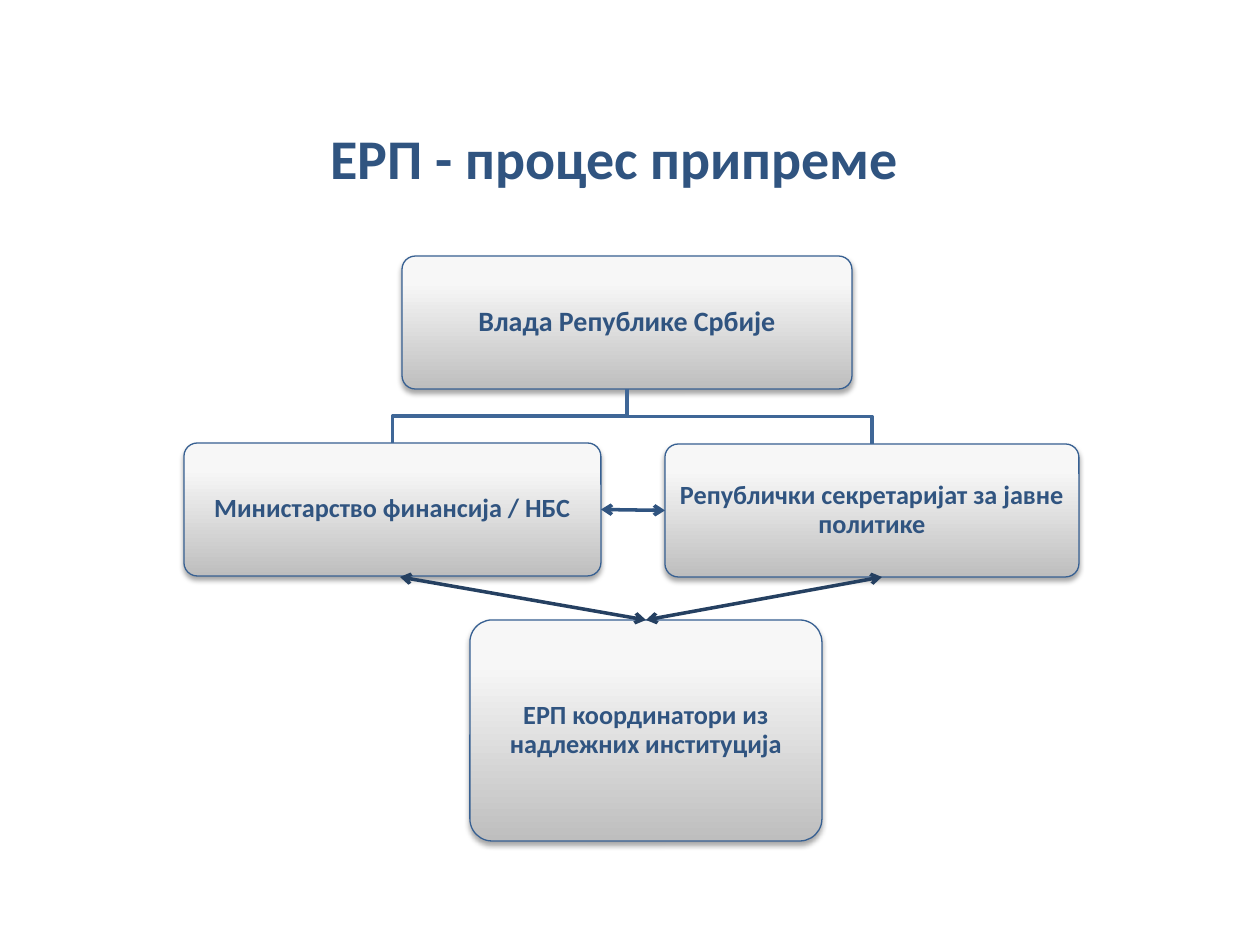
from lxml import etree
from pptx import Presentation
from pptx.dml.color import RGBColor
from pptx.enum.shapes import MSO_CONNECTOR, MSO_SHAPE
from pptx.enum.text import MSO_ANCHOR, MSO_AUTO_SIZE, PP_ALIGN
from pptx.oxml.ns import qn
from pptx.util import Emu, Pt

ROUNDED = MSO_SHAPE.ROUNDED_RECTANGLE
STRAIGHT = MSO_CONNECTOR.STRAIGHT
CENTER = PP_ALIGN.CENTER
MIDDLE = MSO_ANCHOR.MIDDLE
TOP_SIDE, LEFT_SIDE, RIGHT_SIDE = 0, 1, 3

PX = 914400 // 126
FONT = "Calibri"
COLORS = {
    "text": "305480", "border": "376092", "branch": "3F6797",
    "arrow": "254061", "shadow": "000000",
}
# Position in thousandths of a percent, from the bottom of a box upwards
GRADIENT = [(0, "BEBEBE"), (80000, "F7F7F7"), (100000, "F8F8F8")]

TITLE = ("ЕРП - процес припреме", (63, 117, 1103, 81), 32)
# key: text, (left, top, width, height), font size, inset
BOXES = {
    "government": ("Влада Републике Србије", (402, 256, 450, 133), 16, 9),
    "ministry": ("Министарство финансија / НБС", (184, 443, 417, 133), 15, 7),
    "secretariat": ("Републички секретаријат за јавне политике",
                    (665, 444, 414, 133), 15, 7),
    "coordinators": ("ЕРП координатори из надлежних институција",
                     (470, 620, 352, 221), 15, 9),
}
BRANCHES = [("government", "ministry"), ("government", "secretariat")]
# Outer ends of the arrows that meet at the top of the coordinators box
COORDINATION_ENDS = [(400, 577), (882, 577)]


def px(*values):
    return [Emu(round(value * PX)) for value in values]


def rgb(name):
    return RGBColor.from_string(COLORS[name])


def write(frame, text, size):
    frame.word_wrap = True
    paragraph = frame.paragraphs[0]
    paragraph.text = text
    paragraph.alignment = CENTER
    font = paragraph.font
    font.name, font.size, font.bold = FONT, Pt(size), True
    font.color.rgb = rgb("text")
    return paragraph


def set_line(shape, color, width):
    shape.line.color.rgb = rgb(color)
    shape.line.width = Pt(width)


def add_color(parent, color):
    return etree.SubElement(parent, qn("a:srgbClr"), val=color)


def shade(box):
    box.fill.gradient()
    box.fill.gradient_angle = 90
    stops = box.fill._xPr.find(qn("a:gradFill")).find(qn("a:gsLst"))
    for stop in list(stops):
        stops.remove(stop)
    for position, color in GRADIENT:
        add_color(etree.SubElement(stops, qn("a:gs"), pos=str(position)), color)


def drop_shadow(box):
    box.shadow.inherit = False
    effects = box._element.spPr.find(qn("a:effectLst"))
    shadow = etree.SubElement(
        effects, qn("a:outerShdw"), blurRad=str(Pt(3.1)), dist=str(Pt(1.8)),
        dir="5400000", rotWithShape="0")
    etree.SubElement(add_color(shadow, COLORS["shadow"]), qn("a:alpha"), val="35000")


def add_box(shapes, text, place, size, inset):
    box = shapes.add_shape(ROUNDED, *px(*place))
    box.adjustments[0] = 0.1
    shade(box)
    set_line(box, "border", 0.75)
    drop_shadow(box)
    frame = box.text_frame
    write(frame, text, size).line_spacing = 0.9
    frame.vertical_anchor = MIDDLE
    frame.margin_left, frame.margin_top, frame.margin_right, frame.margin_bottom = px(*[inset] * 4)
    return box


def add_branch(shapes, parent, child):
    start_x, start_y = parent.left + parent.width // 2, parent.top + parent.height
    end_x, end_y = child.left + child.width // 2, child.top
    bend_y = (start_y + end_y) // 2
    builder = shapes.build_freeform(start_x, start_y)
    builder.add_line_segments(
        [(start_x, bend_y), (end_x, bend_y), (end_x, end_y)], close=False)
    branch = builder.convert_to_shape()
    branch.fill.background()
    branch.shadow.inherit = False
    set_line(branch, "branch", 2)


def add_double_arrow(shapes, color, start=(0, 0)):
    arrow = shapes.add_connector(STRAIGHT, *px(*start, *start))
    set_line(arrow, color, 2)
    properties = arrow._element.spPr
    for end in ("a:headEnd", "a:tailEnd"):
        etree.SubElement(properties.find(qn("a:ln")), qn(end), type="arrow")
    etree.SubElement(properties, qn("a:effectLst"))
    return arrow


def main():
    presentation = Presentation()
    presentation.slide_width, presentation.slide_height = px(1260, 945)
    shapes = presentation.slides.add_slide(presentation.slide_layouts[6]).shapes

    # Institutions and the branches between them
    boxes = {key: add_box(shapes, *content) for key, content in BOXES.items()}
    for parent, child in BRANCHES:
        add_branch(shapes, boxes[parent], boxes[child])

    # Arrows to the coordinators
    for end in COORDINATION_ENDS:
        add_double_arrow(shapes, "arrow", end).end_connect(boxes["coordinators"], TOP_SIDE)

    # Title
    text, place, size = TITLE
    title = shapes.add_textbox(*px(*place))
    write(title.text_frame, text, size)
    title.text_frame.auto_size = MSO_AUTO_SIZE.SHAPE_TO_FIT_TEXT

    # Arrow between the ministry and the secretariat
    cooperation = add_double_arrow(shapes, "text")
    cooperation.begin_connect(boxes["ministry"], RIGHT_SIDE)
    cooperation.end_connect(boxes["secretariat"], LEFT_SIDE)

    presentation.save("out.pptx")


if __name__ == "__main__":
    main()
